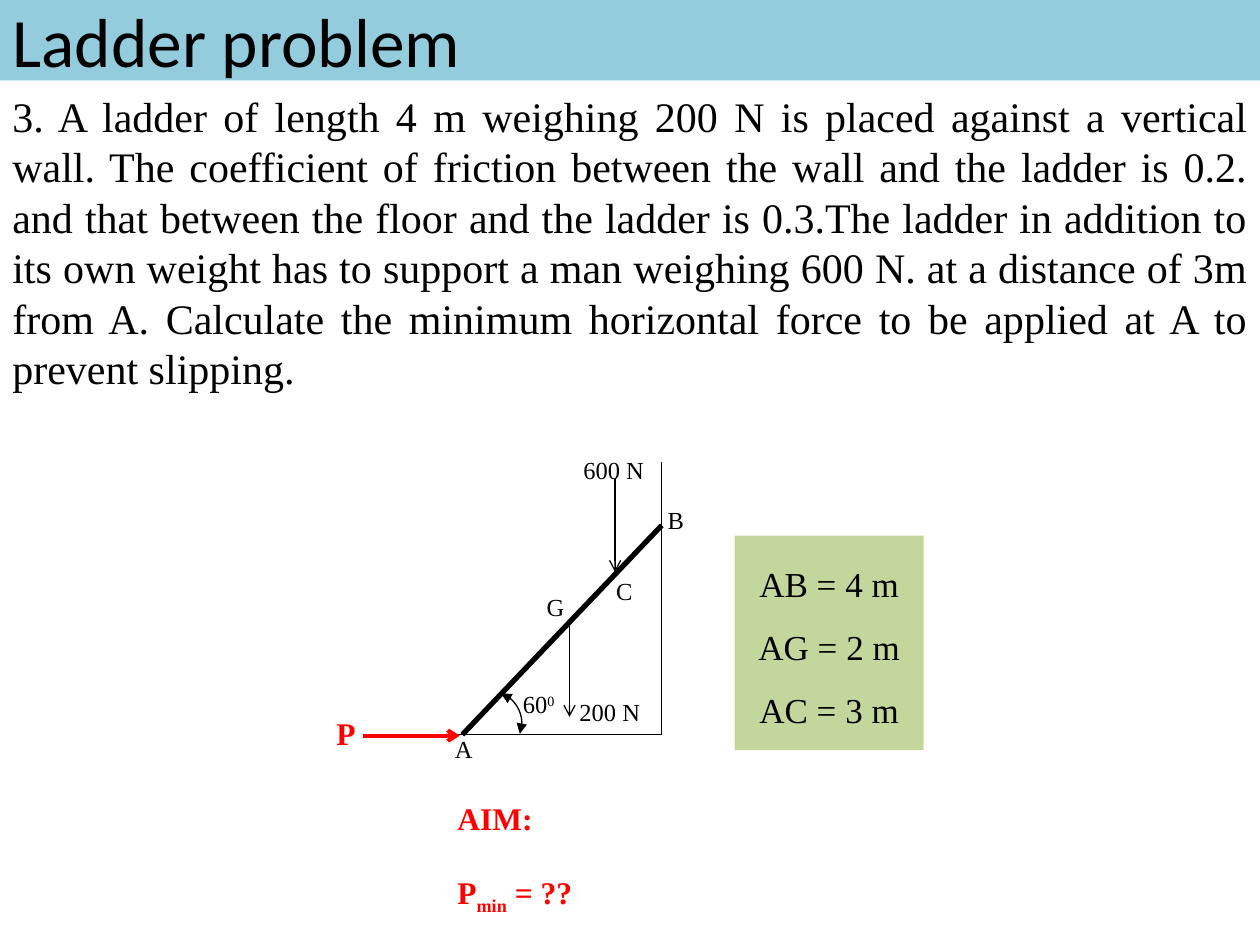
from lxml.etree import SubElement
from pptx import Presentation
from pptx.dml.color import RGBColor
from pptx.enum.shapes import MSO_CONNECTOR as CONN, MSO_SHAPE as SHAPE
from pptx.enum.text import MSO_ANCHOR as ANCHOR, MSO_AUTO_SIZE as AUTO, PP_ALIGN as ALIGN
from pptx.oxml.ns import qn
from pptx.util import Cm, Pt

COLORS = {"title": "93CDDD", "data": "C3D69B", "ink": "000000", "force": "FF0000"}
SERIF = "Times New Roman"
PROBLEM = (
    "3. A ladder of length 4 m weighing 200 N is placed against a vertical wall. "
    "The coefficient of friction between the wall and the ladder is 0.2. and that "
    "between the floor and the ladder is 0.3.The ladder in addition to its own weight "
    "has to support a man weighing 600 N. at a distance of 3m from A. Calculate the "
    "minimum horizontal force to be applied at A to prevent slipping."
)


def rgb(name):
    return RGBColor.from_string(COLORS[name])


def add_run(p, text, font=SERIF, size=14, color="ink", bold=False, baseline=None):
    """Add a formatted run; baseline is a shift in percent."""
    r = p.add_run()
    r.text = text
    r.font.name, r.font.size, r.font.bold = font, Pt(size), bold
    r.font.color.rgb = rgb(color)
    if baseline:
        r.font._element.set("baseline", str(baseline * 1000))
    return r


def add_label(s, x, y, w, h, text="", align=ALIGN.LEFT, **fmt):
    tf = s.shapes.add_textbox(Cm(x), Cm(y), Cm(w), Cm(h)).text_frame
    tf.word_wrap = True
    p = tf.paragraphs[0]
    p.alignment = align
    if text:
        add_run(p, text, **fmt)
    return tf


def set_line(shape, color="ink", width=0.75, head=None, tail=None):
    shape.line.color.rgb = rgb(color)
    shape.line.width = Pt(width)
    ln = shape.line._get_or_add_ln()
    for tag, kind in (("a:headEnd", head), ("a:tailEnd", tail)):
        if kind:
            SubElement(ln, qn(tag), type=kind)


def add_line(s, x1, y1, x2, y2, **fmt):
    line = s.shapes.add_connector(CONN.STRAIGHT, Cm(x1), Cm(y1), Cm(x2), Cm(y2))
    set_line(line, **fmt)
    SubElement(line._element.spPr, qn("a:effectLst"))


def add_title(s, x, y, w, h):
    title = s.shapes.title
    title.left, title.top, title.width, title.height = Cm(x), Cm(y), Cm(w), Cm(h)
    title.fill.solid()
    title.fill.fore_color.rgb = rgb("title")
    tf = title.text_frame
    tf.auto_size, tf.vertical_anchor = AUTO.NONE, ANCHOR.MIDDLE
    p = tf.paragraphs[0]
    p.alignment = ALIGN.LEFT
    add_run(p, "Ladder problem", font="Calibri", size=39.6)


def add_diagram(s, x, y):
    """Draw the ladder, wall, floor and forces from the box corner (x, y)."""
    floor, wall, foot = y + 5.81, x + 6.84, x + 2.82
    add_line(s, x + 1.12, floor, wall, floor)
    add_line(s, wall, floor, wall, y + 0.32)
    add_line(s, foot, floor, wall, y + 1.59, width=3)

    arc = s.shapes.add_shape(SHAPE.ARC, Cm(x + 2.75), Cm(y + 4.94), Cm(1.27), Cm(1.27))
    arc.rotation = 20.2
    arc.shadow.inherit = False
    arc.fill.background()
    set_line(arc, head="triangle", tail="triangle")

    for dx, top, bottom in ((4.98, 3.56, 5.45), (5.9, 0.65, 2.53)):
        add_line(s, x + dx, y + top, x + dx, y + bottom, tail="arrow")
    add_line(s, x + 0.82, y + 5.83, x + 2.77, y + 5.83,
             color="force", width=2.25, tail="arrow")

    labels = (("A", 2.42, 5.68, 1.3), ("B", 6.71, 1.06, 1.3), ("C", 5.67, 2.48, 1.3),
              ("G", 4.27, 2.81, 1.3), ("200 N", 4.93, 4.92, 2.08), ("600 N", 5.01, 0.04, 2.08))
    for text, dx, dy, w in labels:
        add_label(s, x + dx, y + dy, w, 0.86, text)
    add_label(s, x + 0.03, y + 5.27, 2.08, 1.02, "P", size=18, color="force", bold=True)
    angle = add_label(s, x + 3.79, y + 4.77, 1.57, 0.86, "60")
    add_run(angle.paragraphs[0], "0", baseline=30)


def add_data(s, x, y, w, h):
    box = s.shapes.add_shape(SHAPE.RECTANGLE, Cm(x), Cm(y), Cm(w), Cm(h))
    box.shadow.inherit = False
    box.fill.solid()
    box.fill.fore_color.rgb = rgb("data")
    box.line.fill.background()
    tf = box.text_frame
    tf.vertical_anchor = ANCHOR.TOP
    for i, text in enumerate(("AB = 4 m", "AG = 2 m", "AC = 3 m")):
        p = tf.add_paragraph() if i else tf.paragraphs[0]
        p.alignment, p.line_spacing = ALIGN.CENTER, 1.5
        add_run(p, text, size=20)


def add_aim(s, x, y, w, h):
    fmt = {"size": 18, "color": "force", "bold": True}
    tf = add_label(s, x, y, w, h, "AIM:", **fmt)
    p = tf.add_paragraph()
    p.space_before = Pt(21)
    for text, baseline in (("P", None), ("min", -25), (" = ??", None)):
        add_run(p, text, baseline=baseline, **fmt)


def main():
    prs = Presentation()
    prs.slide_width, prs.slide_height = Cm(25.4), Cm(19.05)
    s = prs.slides.add_slide(prs.slide_layouts[5])
    add_title(s, 0, 0, 25.4, 1.62)
    add_label(s, 0, 1.7, 25.4, 6.4, PROBLEM, align=ALIGN.JUSTIFY, size=24)
    add_diagram(s, 6.5, 9)
    add_data(s, 14.81, 10.8, 3.81, 4.32)
    add_aim(s, 8.97, 15.98, 5.54, 3.07)
    prs.save("out.pptx")


if __name__ == "__main__":
    main()
